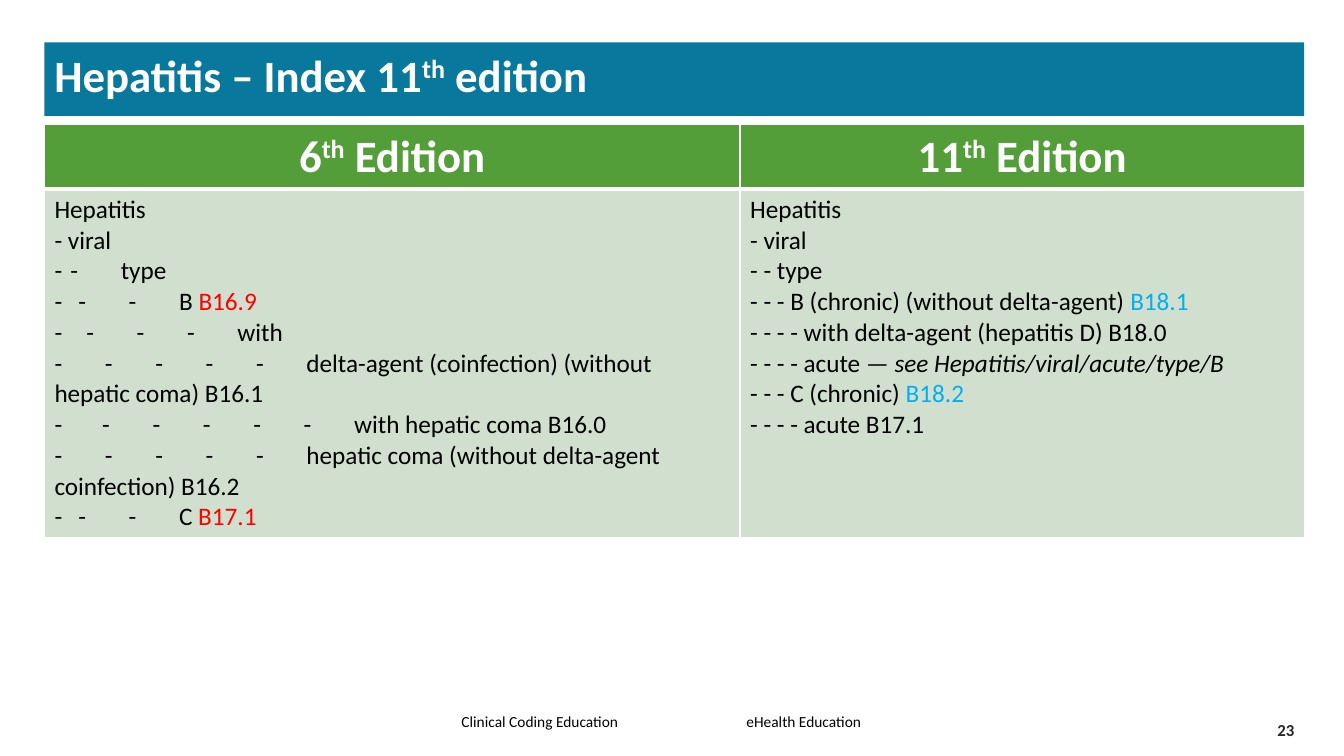
from pptx import Presentation
from pptx.dml.color import RGBColor
from pptx.enum.shapes import MSO_SHAPE
from pptx.enum.text import MSO_ANCHOR, PP_ALIGN
from pptx.oxml.ns import qn
from pptx.util import Cm, Pt
from lxml.etree import SubElement

WHITE = RGBColor(0xFF, 0xFF, 0xFF)
BLACK = RGBColor(0, 0, 0)
CHARCOAL = RGBColor(0x26, 0x26, 0x26)
TEAL = RGBColor(0x08, 0x79, 0x9C)
GREEN = RGBColor(0x54, 0x9E, 0x39)
PALE_GREEN = RGBColor(0xD1, 0xDF, 0xCE)
RED = RGBColor(0xFF, 0, 0)
SKY = RGBColor(0, 0xB0, 0xF0)

HEADING = {"size": 32, "color": WHITE, "bold": True}
INDEX_TABS = [0.2, 0.4, 0.6, 0.8, 1.2, 1.4, 1.6, 1.8]

# Each entry: hanging indent in cm, term, code, code colour
SIXTH_EDITION = [
    (0.4, "Hepatitis", "", BLACK),
    (0.4, "- viral", "", BLACK),
    (0.4, "-\t-\ttype", "", BLACK),
    (0.6, "-\t-\t-\tB ", "B16.9", RED),
    (0.8, "-\t-\t-\t-\twith", "", BLACK),
    (0, "-\t-\t-\t-\t-\tdelta-agent (coinfection) (without hepatic coma) ", "B16.1", BLACK),
    (1.2, "-\t-\t-\t-\t-\t-\twith hepatic coma ", "B16.0", BLACK),
    (0, "-\t-\t-\t-\t-\thepatic coma (without delta-agent coinfection) ", "B16.2", BLACK),
    (0.6, "-\t-\t-\tC ", "B17.1", RED),
]
# Each entry: term, code or cross-reference, its colour, italic
ELEVENTH_EDITION = [
    ("Hepatitis", "", BLACK, False),
    ("- viral", "", BLACK, False),
    ("- - type", "", BLACK, False),
    ("- - - B (chronic) (without delta-agent) ", "B18.1", SKY, False),
    ("- - - - with delta-agent (hepatitis D) ", "B18.0", BLACK, False),
    ("- - - - acute ", "— see Hepatitis/viral/acute/type/B", BLACK, True),
    ("- - - C (chronic) ", "B18.2", SKY, False),
    ("- - - - acute ", "B17.1", BLACK, False),
]


def add_run(paragraph, text, size=18, color=BLACK, bold=False, italic=False, raised=False):
    if not text:
        return
    run = paragraph.add_run()
    run.text = text
    font = run.font
    font.name, font.size = "Calibri", Pt(size)
    font.bold, font.italic = bold, italic
    font.color.rgb = color
    if raised:
        run._r.get_or_add_rPr().set("baseline", "30000")


def add_ordinal(paragraph, before, after):
    """Write a heading with a raised "th" between its two parts."""
    add_run(paragraph, before, **HEADING)
    add_run(paragraph, "th", raised=True, **HEADING)
    add_run(paragraph, after, **HEADING)


def set_tabs(paragraph, stops):
    tab_list = SubElement(paragraph._p.get_or_add_pPr(), qn("a:tabLst"))
    for stop in stops:
        SubElement(tab_list, qn("a:tab"), pos=str(Cm(stop)), algn="l")


def set_hanging(paragraph, indent):
    properties = paragraph._p.get_or_add_pPr()
    properties.set("marL", str(Cm(indent)))
    properties.set("indent", str(-Cm(indent)))


def paragraphs_for(text_frame, entries):
    """Pair every entry with its own paragraph."""
    for index, entry in enumerate(entries):
        yield (text_frame.add_paragraph() if index else text_frame.paragraphs[0]), entry


def style_cell(cell, fill, bottom_width=1):
    properties = cell._tc.get_or_add_tcPr()
    for side, width in (("L", 1), ("R", 1), ("T", 1), ("B", bottom_width)):
        line = SubElement(properties, qn(f"a:ln{side}"), w=str(Pt(width)))
        color = SubElement(SubElement(line, qn("a:solidFill")), qn("a:srgbClr"))
        color.set("val", str(WHITE))
    cell.fill.solid()
    cell.fill.fore_color.rgb = fill


def add_title(slide, left, top, width, height):
    banner = slide.shapes.add_shape(
        MSO_SHAPE.RECTANGLE, Cm(left), Cm(top), Cm(width), Cm(height))
    banner.shadow.inherit = False
    banner.fill.solid()
    banner.fill.fore_color.rgb = TEAL
    banner.line.fill.background()
    frame = banner.text_frame
    frame.word_wrap = True
    frame.vertical_anchor = MSO_ANCHOR.TOP
    frame.paragraphs[0].alignment = PP_ALIGN.LEFT
    add_ordinal(frame.paragraphs[0], "Hepatitis – Index 11", " edition")


def add_comparison(slide, left, top, width, height):
    table = slide.shapes.add_table(
        2, 2, Cm(left), Cm(top), Cm(width), Cm(height)).table
    first_width, header_height = 17.53, 1.63
    table.columns[0].width = Cm(first_width)
    table.columns[1].width = Cm(width - first_width)
    table.rows[0].height = Cm(header_height)
    table.rows[1].height = Cm(height - header_height)

    for column, edition in enumerate(("6", "11")):
        header = table.cell(0, column)
        style_cell(header, GREEN, bottom_width=3)
        style_cell(table.cell(1, column), PALE_GREEN)
        paragraph = header.text_frame.paragraphs[0]
        paragraph.alignment = PP_ALIGN.CENTER
        add_ordinal(paragraph, edition, " Edition")

    sixth, eleventh = (table.cell(1, column).text_frame for column in range(2))
    for paragraph, (indent, term, code, color) in paragraphs_for(sixth, SIXTH_EDITION):
        set_hanging(paragraph, indent)
        set_tabs(paragraph, INDEX_TABS)
        add_run(paragraph, term)
        add_run(paragraph, code, color=color)
    for paragraph, (term, code, color, italic) in paragraphs_for(eleventh, ELEVENTH_EDITION):
        add_run(paragraph, term)
        add_run(paragraph, code, color=color, italic=italic)


def add_text_box(slide, left, top, width, height):
    """Add a vertically centred text box and return its text frame."""
    frame = slide.shapes.add_textbox(Cm(left), Cm(top), Cm(width), Cm(height)).text_frame
    frame.word_wrap = True
    frame.vertical_anchor = MSO_ANCHOR.MIDDLE
    return frame


def add_footer(slide, left, top, width, height):
    frame = add_text_box(slide, left, top, width, height)
    frame.margin_left = Cm(0.94)
    paragraph = frame.paragraphs[0]
    set_tabs(paragraph, [7.18])
    add_run(paragraph, "Clinical Coding Education\teHealth Education", size=11)


def add_page_number(slide, left, top, width, height):
    paragraph = add_text_box(slide, left, top, width, height).paragraphs[0]
    paragraph.alignment = PP_ALIGN.RIGHT
    add_run(paragraph, "23", size=12, color=CHARCOAL, bold=True)


def main():
    presentation = Presentation()
    presentation.slide_width, presentation.slide_height = Cm(33.87), Cm(19.05)
    slide = presentation.slides.add_slide(presentation.slide_layouts[6])
    add_footer(slide, 10.69, 17.53, 12.8, 1.32)
    add_title(slide, 1.12, 1.07, 31.75, 1.85)
    add_comparison(slide, 1.12, 3.14, 31.75, 10.4)
    add_page_number(slide, 29.21, 17.98, 3.66, 0.84)
    presentation.save("out.pptx")


if __name__ == "__main__":
    main()
